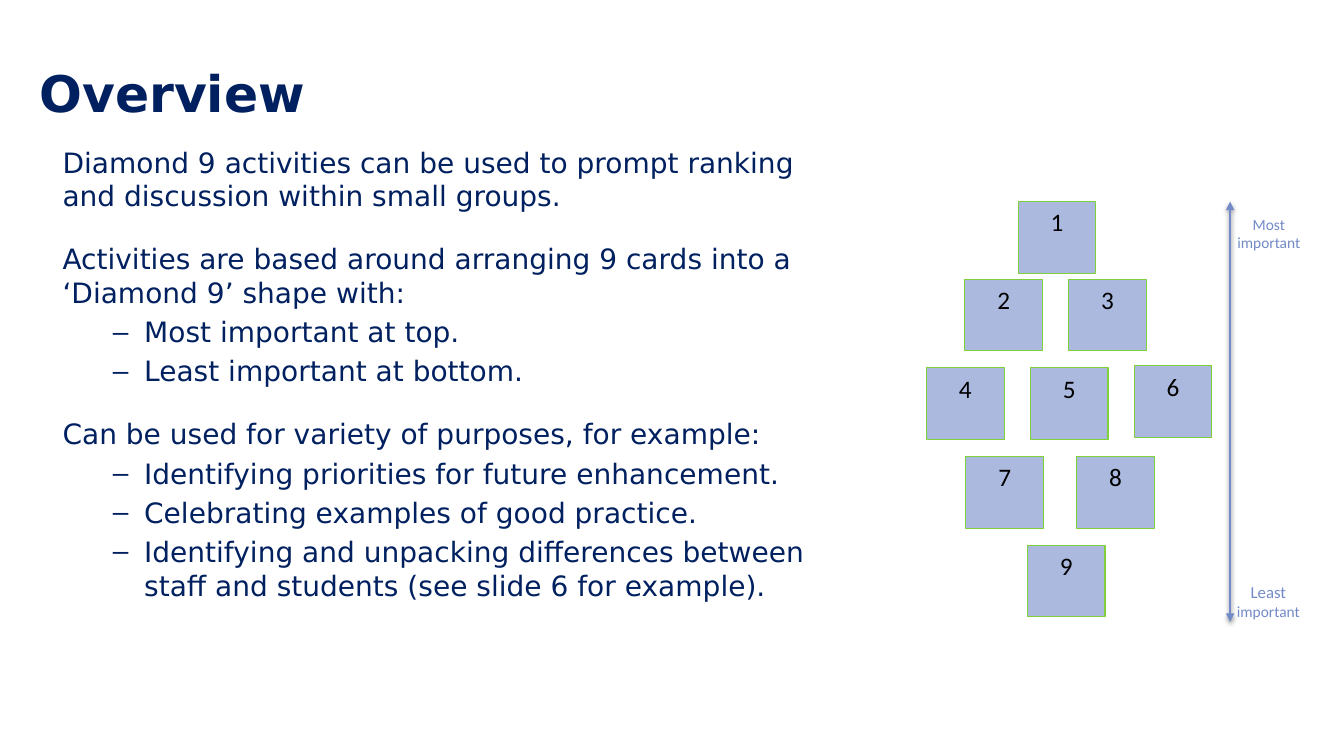
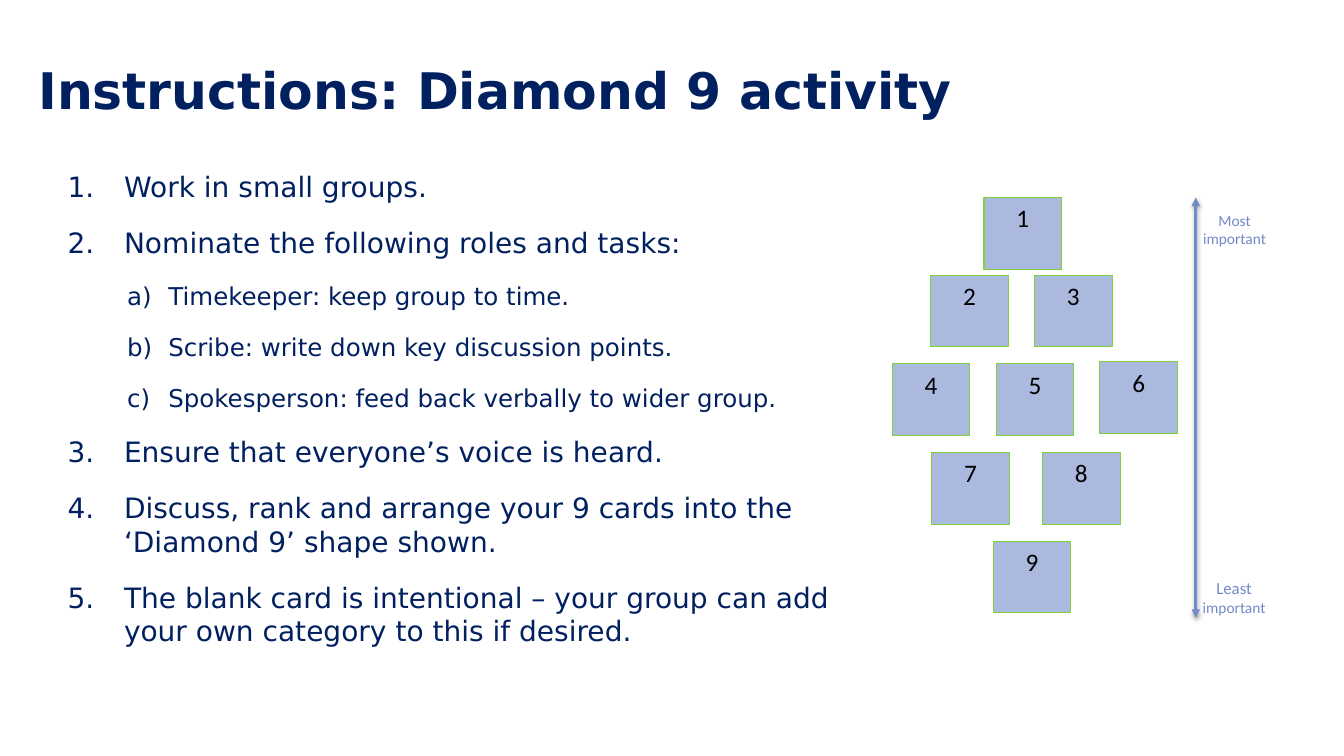
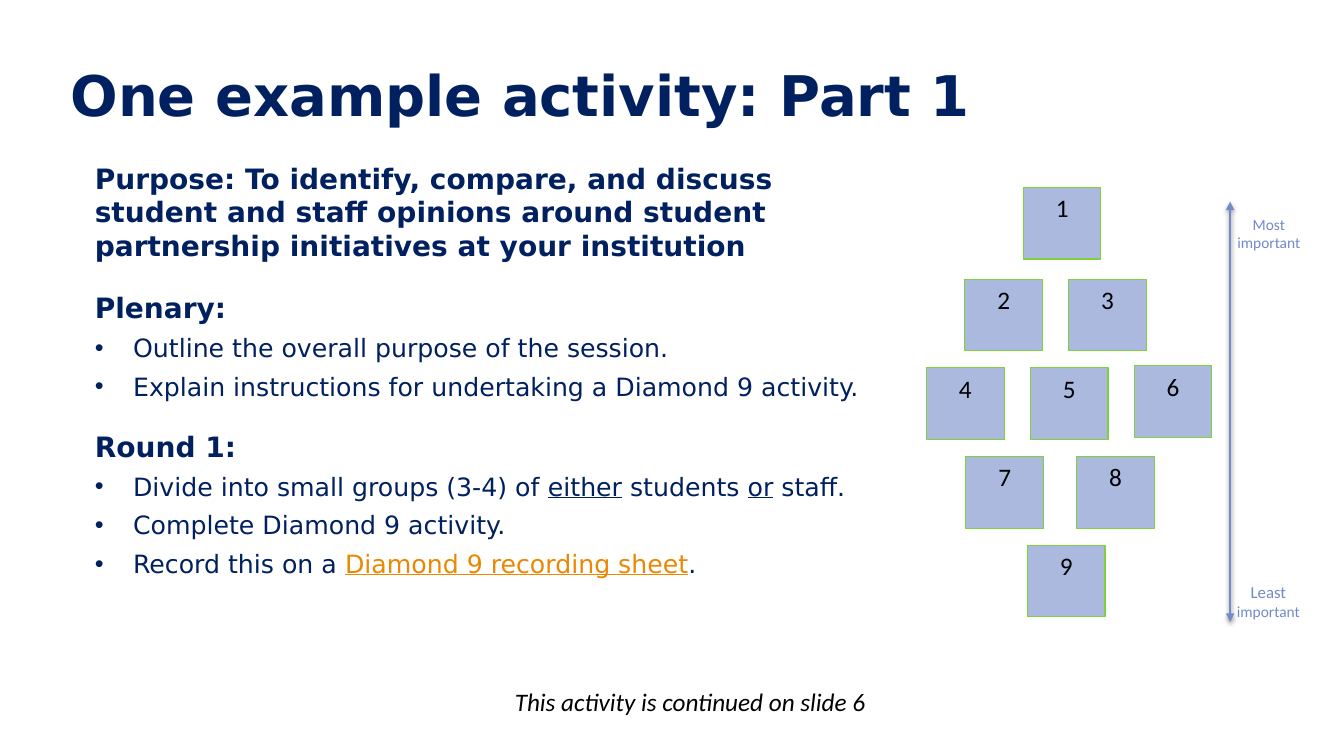
import pptx
import pptx.util
import pptx.dml.color
import pptx.enum.shapes
import pptx.enum.text
import pptx.oxml
import pptx.oxml.ns
from lxml import etree

COLOURS = {"navy": "002060", "card": "ABB9DE", "edge": "7FD13B",
           "scale": "738AC8", "link": "EB8803", "black": "000000"}
HEADING_FONT, CARD_FONT = "DejaVu Sans", "Calibri"
ALIGN = pptx.enum.text.PP_ALIGN
Inches, Pt = pptx.util.Inches, pptx.util.Pt

# Paragraph styles: indents in inches, sizes and gaps in points
STYLES = {
    "plain": dict(size=20, before=4),
    "group": dict(size=20, before=21),
    "dash": dict(size=20, before=4, level=1, indent=(0.81, -0.31), char="–"),
    "step": dict(size=20, before=4, after=12, indent=(0.56, -0.56), number="arabicPeriod"),
    "role": dict(size=17.5, before=3.5, after=12, level=1, indent=(1, -0.41), number="alphaLcParenR"),
    "purpose": dict(size=20, after=6, bold=True),
    "heading": dict(size=20, before=14, after=6, bold=True),
    "dot": dict(size=18, after=6, indent=(0.38, -0.38), char="•"),
}
UNDERLINED = dict(underline=True)

# Content of the slides
SLIDES = [
    dict(title="Overview", title_at=(0.29, 0.19, 11.5, 1.45), title_size=36,
         body_at=(0.52, 1.39, 8.07, 4.78), diamond_at=(9.19, 2),
         body=[
             ("plain", "Diamond 9 activities can be used to prompt ranking and discussion within small groups."),
             ("group", "Activities are based around arranging 9 cards into a ‘Diamond 9’ shape with:"),
             ("dash", "Most important at top."),
             ("dash", "Least important at bottom."),
             ("group", "Can be used for variety of purposes, for example:"),
             ("dash", "Identifying priorities for future enhancement."),
             ("dash", "Celebrating examples of good practice."),
             ("dash", "Identifying and unpacking differences between staff and students (see slide 6 for example)."),
         ]),
    dict(title="Instructions: Diamond 9 activity", title_at=(0.28, 0.15, 9.67, 1.48), title_size=36,
         body_at=(0.57, 1.63, 7.91, 4.86), diamond_at=(8.85, 1.96),
         body=[
             ("step", "Work in small groups."),
             ("step", "Nominate the following roles and tasks:"),
             ("role", "Timekeeper: keep group to time."),
             ("role", "Scribe: write down key discussion points."),
             ("role", "Spokesperson: feed back verbally to wider group."),
             ("step", "Ensure that everyone’s voice is heard."),
             ("step", "Discuss, rank and arrange your 9 cards into the ‘Diamond 9’ shape shown."),
             ("step", "The blank card is intentional – your group can add your own category to this if desired."),
         ]),
    dict(title="One example activity: Part 1", title_at=(0.6, 0.21, 11.5, 1.45), title_size=40,
         body_at=(0.84, 1.55, 8.09, 4.87), diamond_at=(9.19, 2), top_card_shift=(0.05, -0.14),
         body=[
             ("purpose", "Purpose: To identify, compare, and discuss student and staff opinions "
                         "around student partnership initiatives at your institution"),
             ("heading", "Plenary:"),
             ("dot", "Outline the overall purpose of the session."),
             ("dot", "Explain instructions for undertaking a Diamond 9 activity."),
             ("heading", "Round 1:"),
             ("dot", [("Divide into small groups (3-4) of ", {}), ("either", UNDERLINED),
                      (" students ", {}), ("or", UNDERLINED), (" staff.", {})]),
             ("dot", "Complete Diamond 9 activity."),
             ("dot", [("Record this on a ", {}),
                      ("Diamond 9 recording sheet", dict(underline=True, color="link")), (".", {})]),
         ],
         footnote="This activity is continued on slide 6"),
]

# Diamond geometry, relative to its left and top: row left, row top, pitch, cards
CARD_SIZE = (0.77, 0.71)
CARD_ROWS = [(0.91, 0, 0, 1), (0.38, 0.77, 1.03, 2), (0, 1.65, 1.03, 3),
             (0.39, 2.53, 1.1, 2), (1, 3.41, 0, 1)]
SCALE_LEFT, SCALE_LENGTH = 3.01, 4.17
SCALE_LABELS = [((2.96, 0.08, 0.87, 0.42), [("Most important", {})]),
                ((2.95, 3.72, 0.88, 0.44), [("Least ", dict(size=12)), ("important", {})])]


def rgb(name):
    return pptx.dml.color.RGBColor.from_string(COLOURS[name])


def inches(values):
    return [Inches(value) for value in values]


def child(parent, tag, **attributes):
    return etree.SubElement(parent, pptx.oxml.ns.qn(tag), **attributes)


def write(frame, text, size=20, font=HEADING_FONT, color="navy", align=ALIGN.LEFT, before=0,
          after=0, level=0, indent=(0, 0), char=None, number=None, **emphasis):
    """Add one paragraph; text is a string or a list of (string, overrides)."""
    first = not frame.paragraphs[0].runs
    paragraph = frame.paragraphs[0] if first else frame.add_paragraph()
    properties = paragraph._p.get_or_add_pPr()
    properties.set("marL", str(Inches(indent[0])))
    properties.set("indent", str(Inches(indent[1])))
    if char:
        child(properties, "a:buFont", typeface="Arial")
        child(properties, "a:buChar", char=char)
    elif number:
        child(properties, "a:buFont", typeface="+mj-lt")
        child(properties, "a:buAutoNum", type=number)
    else:
        child(properties, "a:buNone")
    paragraph.level, paragraph.alignment = level, align
    paragraph.space_before, paragraph.space_after = Pt(0 if first else before), Pt(after)
    for words, changes in [(text, {})] if isinstance(text, str) else text:
        look = {"size": size, "color": color, **emphasis, **changes}
        run = paragraph.add_run()
        run.text = words
        run.font.name, run.font.size = font, Pt(look["size"])
        run.font.color.rgb = rgb(look["color"])
        run.font.bold = look.get("bold", False)
        run.font.italic = look.get("italic", False)
        run.font.underline = look.get("underline", False)


def prepare(box, anchor=pptx.enum.text.MSO_ANCHOR.TOP):
    frame = box.text_frame
    frame.word_wrap, frame.vertical_anchor = True, anchor
    frame.auto_size = pptx.enum.text.MSO_AUTO_SIZE.NONE
    return frame


def place(placeholder, at):
    placeholder.left, placeholder.top, placeholder.width, placeholder.height = inches(at)


def add_card(group, label, left, top):
    card = group.shapes.add_shape(pptx.enum.shapes.MSO_SHAPE.RECTANGLE,
                                  *inches((left, top, *CARD_SIZE)))
    card.shadow.inherit = False
    card.fill.solid()
    card.fill.fore_color.rgb = rgb("card")
    card.line.color.rgb, card.line.width = rgb("edge"), Pt(0.75)
    write(prepare(card), label, size=18, font=CARD_FONT, color="black", align=ALIGN.CENTER)


def add_scale(group, left, top):
    scale = group.shapes.add_connector(pptx.enum.shapes.MSO_CONNECTOR.STRAIGHT,
                                       *inches((left, top, left, top + SCALE_LENGTH)))
    scale.line.color.rgb, scale.line.width = rgb("scale"), Pt(2)
    outline = scale.line._get_or_add_ln()
    child(outline, "a:headEnd", type="triangle")
    child(outline, "a:tailEnd", type="triangle")
    effects = child(scale._element.spPr, "a:effectLst")
    shadow = child(effects, "a:outerShdw", blurRad=str(Pt(3.1)), dist=str(Pt(1.6)),
                   dir="5400000", rotWithShape="0")
    child(child(shadow, "a:srgbClr", val=COLOURS["black"]), "a:alpha", val="38000")


def add_diamond(slide, left, top, top_card_shift):
    group = slide.shapes.add_group_shape()
    shifts = {1: top_card_shift, 6: (0, -0.02)}
    rank = 0
    for row_left, row_top, pitch, count in CARD_ROWS:
        for column in range(count):
            rank += 1
            across, down = shifts.get(rank, (0, 0))
            add_card(group, str(rank), left + row_left + column * pitch + across,
                     top + row_top + down)
    add_scale(group, left + SCALE_LEFT, top)
    for (label_left, label_top, width, height), words in SCALE_LABELS:
        label = group.shapes.add_textbox(*inches((left + label_left, top + label_top, width, height)))
        write(prepare(label), words, size=11, font=CARD_FONT, color="scale", align=ALIGN.CENTER)


def build_slide(deck, content):
    slide = deck.slides.add_slide(deck.slide_layouts[1])
    title, body = slide.shapes.title, slide.placeholders[1]
    place(title, content["title_at"])
    write(prepare(title, pptx.enum.text.MSO_ANCHOR.MIDDLE), content["title"],
          size=content["title_size"], bold=True)
    place(body, content["body_at"])
    body_frame = prepare(body)
    for style, text in content["body"]:
        write(body_frame, text, **STYLES[style])
    add_diamond(slide, *content["diamond_at"], content.get("top_card_shift", (0, 0)))
    if "footnote" in content:
        footnote = slide.shapes.add_textbox(*inches((3.5, 6.76, 6.69, 0.4)))
        write(prepare(footnote), content["footnote"], size=18, font=CARD_FONT,
              color="black", align=ALIGN.CENTER, italic=True)


def main():
    deck = pptx.Presentation()
    deck.slide_width, deck.slide_height = Inches(13.33), Inches(7.5)
    for content in SLIDES:
        build_slide(deck, content)
    deck.save("out.pptx")


if __name__ == "__main__":
    main()
